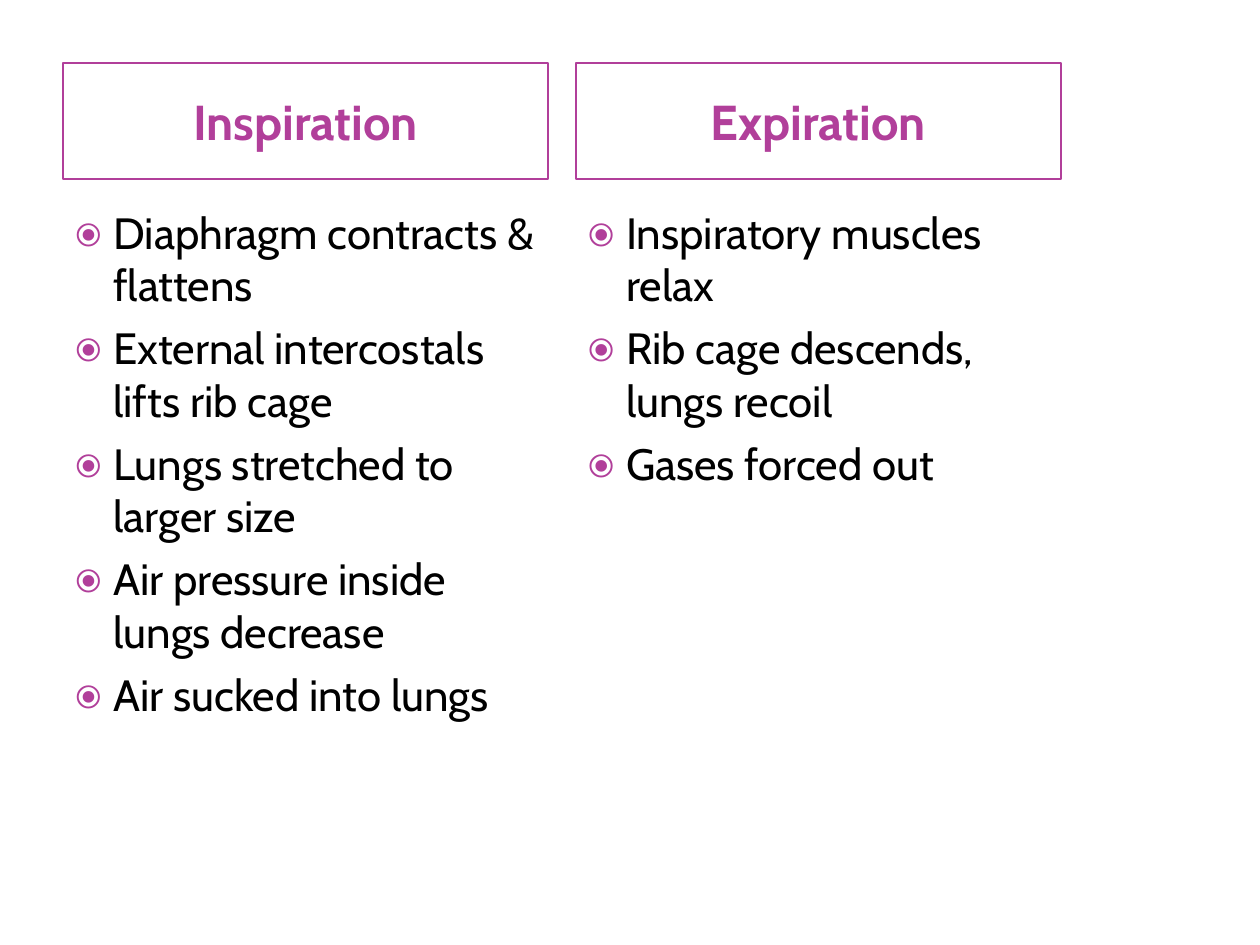
"""Build a slide comparing inspiration and expiration in two columns."""
from lxml.etree import SubElement
from pptx import Presentation
from pptx.dml.color import RGBColor
from pptx.enum.text import MSO_ANCHOR, MSO_AUTO_SIZE, PP_ALIGN
from pptx.oxml.ns import qn
from pptx.util import Pt

MAGENTA = RGBColor(0xB1, 0x3F, 0x9A)
BLACK = RGBColor(0, 0, 0)

COLUMN_LEFT = 36
COLUMN_WIDTH = 277.2
COLUMN_STEP = 293.04
HEADING_TOP, HEADING_HEIGHT = 36, 66.24
LIST_TOP, LIST_HEIGHT = 113.76, 324

COLUMNS = [
    ("Inspiration", [
        "Diaphragm contracts & flattens",
        "External intercostals lifts rib cage",
        "Lungs stretched to larger size",
        "Air pressure inside lungs decrease",
        "Air sucked into lungs",
    ]),
    ("Expiration", [
        "Inspiratory muscles relax",
        "Rib cage descends, lungs recoil",
        "Gases forced out",
    ]),
]


def write_text(paragraph, text, *, font, size, color, bold=False,
               align=PP_ALIGN.LEFT, space_before=0):
    paragraph.alignment = align
    paragraph.space_before = Pt(space_before)
    run = paragraph.add_run()
    run.text = text
    run.font.name = font
    run.font.size = Pt(size)
    run.font.bold = bold
    run.font.color.rgb = color


class ComparisonSlide:
    font = "Cabin"
    accent = MAGENTA
    heading_size = 28
    list_size = 25
    indent = 21.6
    bullet = "⦿"

    def __init__(self, slide):
        self.slide = slide
        title = slide.shapes.title._element
        title.getparent().remove(title)

    def place(self, index, left, top, height, anchor):
        shape = self.slide.placeholders[index]
        shape.left, shape.top = Pt(left), Pt(top)
        shape.width, shape.height = Pt(COLUMN_WIDTH), Pt(height)
        frame = shape.text_frame
        frame.auto_size = MSO_AUTO_SIZE.NONE
        frame.word_wrap = True
        frame.vertical_anchor = anchor
        return shape

    def add_heading(self, index, left, text):
        shape = self.place(index, left, HEADING_TOP, HEADING_HEIGHT, MSO_ANCHOR.MIDDLE)
        shape.line.color.rgb = self.accent
        shape.line.width = Pt(1)
        write_text(shape.text_frame.paragraphs[0], text, font=self.font,
                   size=self.heading_size, color=self.accent, bold=True,
                   align=PP_ALIGN.CENTER)

    def add_list(self, index, left, items):
        shape = self.place(index, left, LIST_TOP, LIST_HEIGHT, MSO_ANCHOR.TOP)
        frame = shape.text_frame
        for number, item in enumerate(items):
            paragraph = frame.add_paragraph() if number else frame.paragraphs[0]
            self.add_bullet(paragraph)
            write_text(paragraph, item, font=self.font, size=self.list_size,
                       color=BLACK, space_before=6 if number else 0)

    def add_bullet(self, paragraph):
        properties = paragraph._p.get_or_add_pPr()
        properties.set("marL", str(Pt(self.indent)))
        properties.set("indent", str(-Pt(self.indent)))
        color = SubElement(properties, qn("a:buClr"))
        SubElement(color, qn("a:srgbClr"), val=str(self.accent))
        SubElement(properties, qn("a:buSzPct"), val="73000")
        SubElement(properties, qn("a:buFont"), typeface="Noto Sans Symbols")
        SubElement(properties, qn("a:buChar"), char=self.bullet)


def main():
    presentation = Presentation()
    presentation.slide_width, presentation.slide_height = Pt(720), Pt(540)
    layout = presentation.slide_layouts.get_by_name("Comparison")
    comparison = ComparisonSlide(presentation.slides.add_slide(layout))
    for number, (heading, items) in enumerate(COLUMNS):
        left = COLUMN_LEFT + number * COLUMN_STEP
        comparison.add_heading(2 * number + 1, left, heading)
        comparison.add_list(2 * number + 2, left, items)
    presentation.save("out.pptx")


if __name__ == "__main__":
    main()
